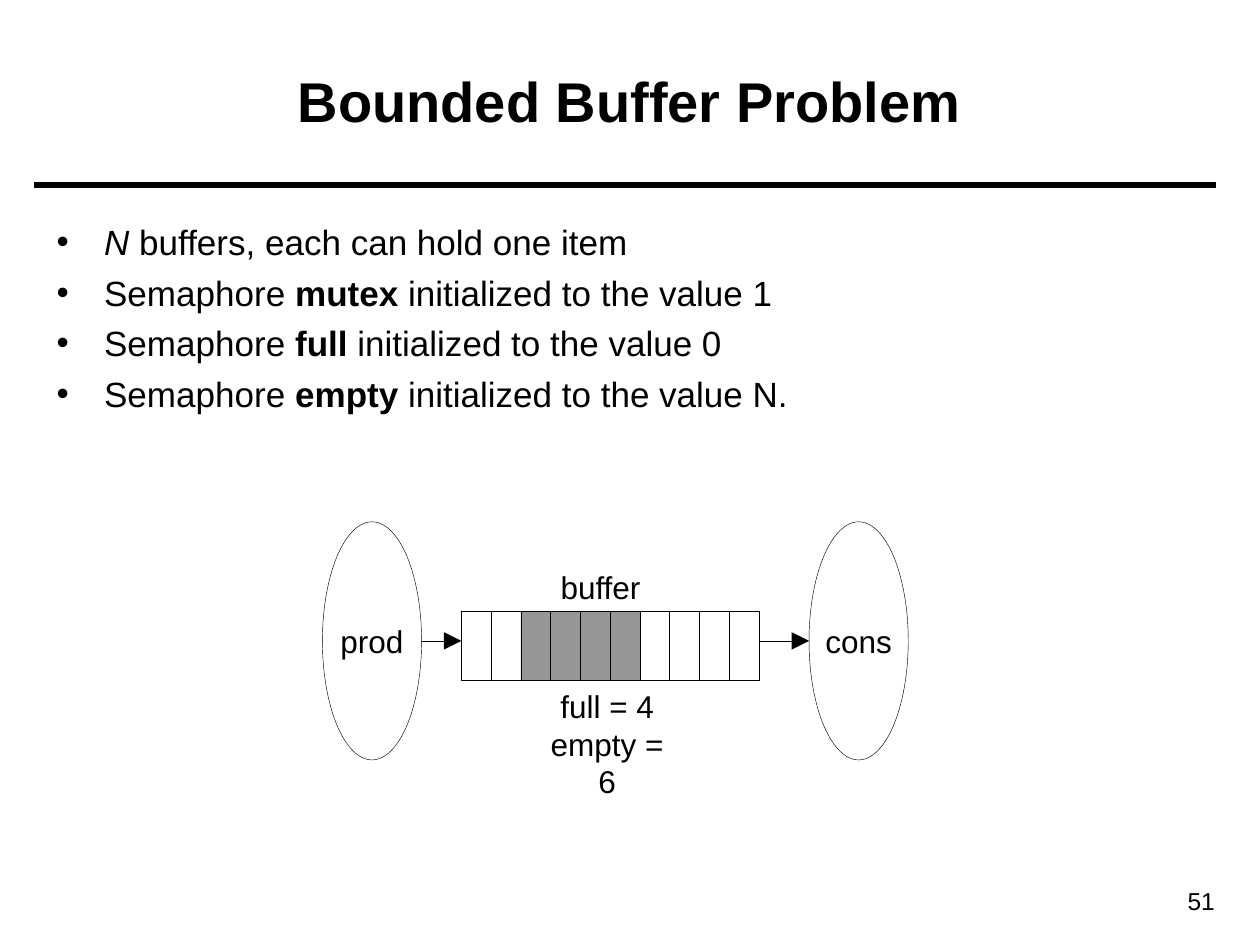
from dataclasses import dataclass

from lxml.etree import SubElement
from pptx import Presentation
from pptx.dml.color import RGBColor
from pptx.enum.shapes import MSO_CONNECTOR, MSO_SHAPE
from pptx.enum.text import MSO_ANCHOR as Anchor, PP_ALIGN as Align
from pptx.oxml.ns import qn
from pptx.util import Cm, Pt

TITLE = "Bounded Buffer Problem"
BULLETS = [
    [("N", "italic"), (" buffers, each can hold one item", "")],
    [("Semaphore ", ""), ("mutex", "bold"), (" initialized to the value 1", "")],
    [("Semaphore ", ""), ("full", "bold"), (" initialized to the value 0", "")],
    [("Semaphore ", ""), ("empty", "bold"), (" initialized to the value N.", "")],
]
BUFFER_LABEL = "buffer"
COUNTS = "full = 4\nempty = 6"
PAGE_NUMBER = "51"
SLOTS = 10
FULL_SLOTS = range(2, 6)
ACTORS = [("prod", 6.5), ("cons", 16.31)]

ACTOR_TOP, ACTOR_WIDTH, ACTOR_HEIGHT = 10.52, 2.0, 4.8
BUFFER_LEFT, BUFFER_TOP, SLOT_WIDTH, SLOT_HEIGHT = 9.3, 12.32, 0.6, 1.4


@dataclass(frozen=True)
class Theme:
    font: str = "Arial"
    ink: RGBColor = RGBColor(0x00, 0x00, 0x00)
    full: RGBColor = RGBColor(0x96, 0x96, 0x96)
    title: int = 32
    body: int = 20
    label: int = 18
    small: int = 14
    thin: float = 0.25
    thick: float = 3


THEME = Theme()


def style(frame, size, align=Align.LEFT, bold=None):
    for paragraph in frame.paragraphs:
        paragraph.alignment = align
        for run in paragraph.runs:
            run.font.name = THEME.font
            run.font.size = Pt(size)
            run.font.color.rgb = THEME.ink
            if bold is not None:
                run.font.bold = bold


def add_text(slide, text, box, size, align=Align.LEFT, wrap=False):
    frame = slide.shapes.add_textbox(*map(Cm, box)).text_frame
    frame.word_wrap = wrap
    frame.text = text
    style(frame, size, align)


def add_outline(slide, kind, box, fill=None):
    shape = slide.shapes.add_shape(kind, *map(Cm, box))
    shape.shadow.inherit = False
    if fill is None:
        shape.fill.background()
    else:
        shape.fill.solid()
        shape.fill.fore_color.rgb = fill
    shape.line.color.rgb = THEME.ink
    shape.line.width = Pt(THEME.thin)
    return shape


def add_line(slide, left, right, y, width, arrow=False):
    line = slide.shapes.add_connector(
        MSO_CONNECTOR.STRAIGHT, Cm(left), Cm(y), Cm(right), Cm(y))
    line.line.color.rgb = THEME.ink
    line.line.width = Pt(width)
    if arrow:
        SubElement(line.line._get_or_add_ln(), qn("a:tailEnd"),
                   type="triangle", w="lg", len="lg")
    SubElement(line._element.spPr, qn("a:effectLst"))


def add_title(slide):
    title = slide.shapes.title
    title.left, title.top, title.width, title.height = map(Cm, (0.89, 0.43, 23.6, 3.18))
    title.text_frame.text = TITLE
    title.text_frame.vertical_anchor = Anchor.MIDDLE
    style(title.text_frame, THEME.title, Align.CENTER, bold=True)


def add_bullets(slide):
    frame = slide.shapes.add_textbox(*map(Cm, (0.89, 4.32, 23.6, 13))).text_frame
    frame.word_wrap = True
    for index, pieces in enumerate(BULLETS):
        paragraph = frame.add_paragraph() if index else frame.paragraphs[0]
        paragraph.space_before = Pt(5)
        properties = paragraph._p.get_or_add_pPr()
        properties.set("marL", str(Cm(0.96)))
        properties.set("indent", str(-Cm(0.96)))
        SubElement(properties, qn("a:buFont"), typeface=THEME.font)
        SubElement(properties, qn("a:buChar"), char="•")
        for words, emphasis in pieces:
            run = paragraph.add_run()
            run.text = words
            run.font.bold = emphasis == "bold"
            run.font.italic = emphasis == "italic"
    style(frame, THEME.body)


def add_diagram(slide):
    for slot in range(SLOTS):
        box = (BUFFER_LEFT + slot * SLOT_WIDTH, BUFFER_TOP, SLOT_WIDTH, SLOT_HEIGHT)
        add_outline(slide, MSO_SHAPE.RECTANGLE, box,
                    THEME.full if slot in FULL_SLOTS else None)
    add_text(slide, COUNTS, (10.59, 13.72, 3.3, 1.78), THEME.label, Align.CENTER)
    add_text(slide, BUFFER_LABEL, (11.05, 11.33, 2.13, 1.02), THEME.label)

    for name, left in ACTORS:
        actor = add_outline(slide, MSO_SHAPE.OVAL,
                            (left, ACTOR_TOP, ACTOR_WIDTH, ACTOR_HEIGHT))
        frame = actor.text_frame
        frame.word_wrap = False
        frame.vertical_anchor = Anchor.MIDDLE
        frame.text = name
        style(frame, THEME.label, Align.CENTER)

    (_, producer_left), (_, consumer_left) = ACTORS
    flow_y = ACTOR_TOP + ACTOR_HEIGHT / 2
    buffer_right = BUFFER_LEFT + SLOTS * SLOT_WIDTH
    for start, end in [(producer_left + ACTOR_WIDTH, BUFFER_LEFT),
                       (buffer_right, consumer_left)]:
        add_line(slide, start, end, flow_y, THEME.thin, arrow=True)


def main():
    deck = Presentation()
    deck.slide_width, deck.slide_height = Cm(25.4), Cm(19.05)
    slide = deck.slides.add_slide(deck.slide_layouts[5])
    add_line(slide, 0.69, 24.51, 3.73, THEME.thick)
    add_text(slide, PAGE_NUMBER, (22.1, 17.73, 2.64, 0.86), THEME.small,
             Align.RIGHT, wrap=True)
    add_title(slide)
    add_bullets(slide)
    add_diagram(slide)
    deck.save("out.pptx")


if __name__ == "__main__":
    main()
